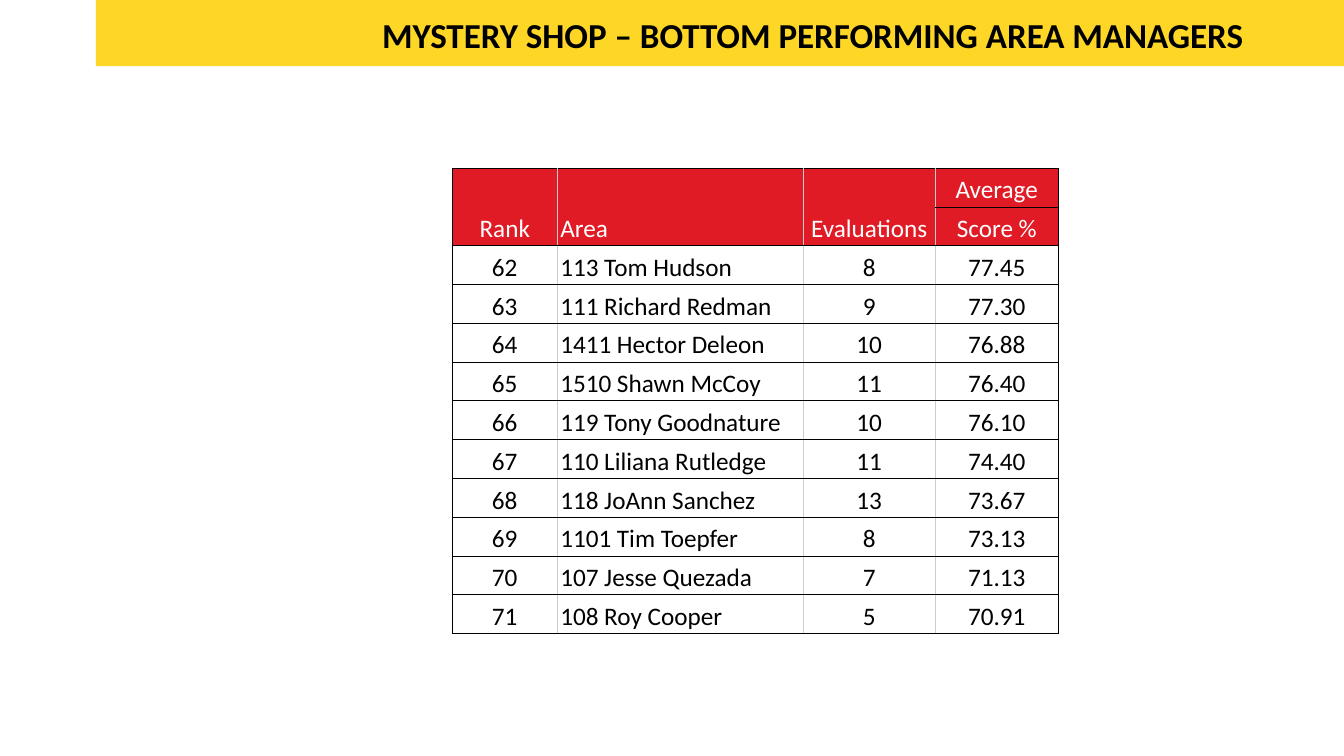
"""Build the slide ranking the bottom performing area managers."""
from lxml.etree import SubElement
from pptx import Presentation
from pptx.dml.color import RGBColor
from pptx.enum.shapes import MSO_SHAPE
from pptx.enum.text import MSO_ANCHOR as Anchor, PP_ALIGN as Align
from pptx.oxml.ns import qn
from pptx.util import Cm, Pt

YELLOW = RGBColor(0xFE, 0xD7, 0x26)
RED = RGBColor(0xE0, 0x1B, 0x25)
GREY = RGBColor(0xCC, 0xCC, 0xCC)
BLACK = RGBColor(0, 0, 0)
WHITE = RGBColor(0xFF, 0xFF, 0xFF)
FONT = "Calibri"

ROWS = [
    ("Rank", "Area", "Evaluations", "Average"),
    ("", "", "", "Score %"),
    ("62", "113 Tom Hudson", "8", "77.45"),
    ("63", "111 Richard Redman", "9", "77.30"),
    ("64", "1411 Hector Deleon", "10", "76.88"),
    ("65", "1510 Shawn McCoy", "11", "76.40"),
    ("66", "119 Tony Goodnature", "10", "76.10"),
    ("67", "110 Liliana Rutledge", "11", "74.40"),
    ("68", "118 JoAnn Sanchez", "13", "73.67"),
    ("69", "1101 Tim Toepfer", "8", "73.13"),
    ("70", "107 Jesse Quezada", "7", "71.13"),
    ("71", "108 Roy Cooper", "5", "70.91"),
]
COLUMN_WIDTHS = [2.64, 6.2, 3.33, 3.1]
ROW_HEIGHT = 0.87
HEADER_ROWS = 2
AREA_COLUMN = 1
LAST_COLUMN = len(COLUMN_WIDTHS) - 1


def add_span(para, text, size, color, bold=False):
    span = para.add_run()
    span.text = text
    span.font.name = FONT
    span.font.size = Pt(size)
    span.font.bold = bold
    span.font.color.rgb = color


def add_border(cell, side, color):
    line = SubElement(cell._tc.get_or_add_tcPr(), qn(f"a:ln{side}"), w=str(Pt(0.75)))
    fill = SubElement(line, qn("a:solidFill"))
    SubElement(fill, qn("a:srgbClr"), val=str(color))


deck = Presentation()
deck.slide_width, deck.slide_height = Cm(33.87), Cm(19.05)
page = deck.slides.add_slide(deck.slide_layouts[6])

band = page.shapes.add_shape(MSO_SHAPE.RECTANGLE, Cm(2.42), Cm(0), Cm(31.45), Cm(1.67))
band.shadow.inherit = False
band.fill.solid()
band.fill.fore_color.rgb = YELLOW
band.line.fill.background()

title_box = page.shapes.add_textbox(Cm(6.65), Cm(0.33), Cm(27.66), Cm(1.22))
title_box.text_frame.word_wrap = True
title = title_box.text_frame.paragraphs[0]
title.alignment = Align.CENTER
title.line_spacing = 0.9
add_span(title, "MYSTERY SHOP – BOTTOM PERFORMING AREA MANAGERS", 25, BLACK, bold=True)

table = page.shapes.add_table(
    len(ROWS), len(COLUMN_WIDTHS), Cm(11.4), Cm(4.24),
    Cm(sum(COLUMN_WIDTHS)), Cm(ROW_HEIGHT * len(ROWS)),
).table
table.horz_banding = False
for column, width in zip(table.columns, COLUMN_WIDTHS):
    column.width = Cm(width)

for row_index, values in enumerate(ROWS):
    table.rows[row_index].height = Cm(ROW_HEIGHT)
    is_header = row_index < HEADER_ROWS
    for column_index, value in enumerate(values):
        cell = table.cell(row_index, column_index)
        add_border(cell, "L", BLACK if column_index == 0 else GREY)
        add_border(cell, "R", BLACK if column_index == LAST_COLUMN else GREY)
        add_border(cell, "T", BLACK)
        add_border(cell, "B", BLACK)
        cell.fill.solid()
        cell.fill.fore_color.rgb = RED if is_header else WHITE
        cell.vertical_anchor = Anchor.BOTTOM
        cell.margin_left = cell.margin_right = Cm(0.08)
        cell.margin_top = cell.margin_bottom = Cm(0.05)
        if value:
            para = cell.text_frame.paragraphs[0]
            para.alignment = Align.LEFT if column_index == AREA_COLUMN else Align.CENTER
            para.line_spacing = 1.15
            add_span(para, value, 18, WHITE if is_header else BLACK)

for column_index in range(LAST_COLUMN):
    table.cell(0, column_index).merge(table.cell(HEADER_ROWS - 1, column_index))

deck.save("out.pptx")
